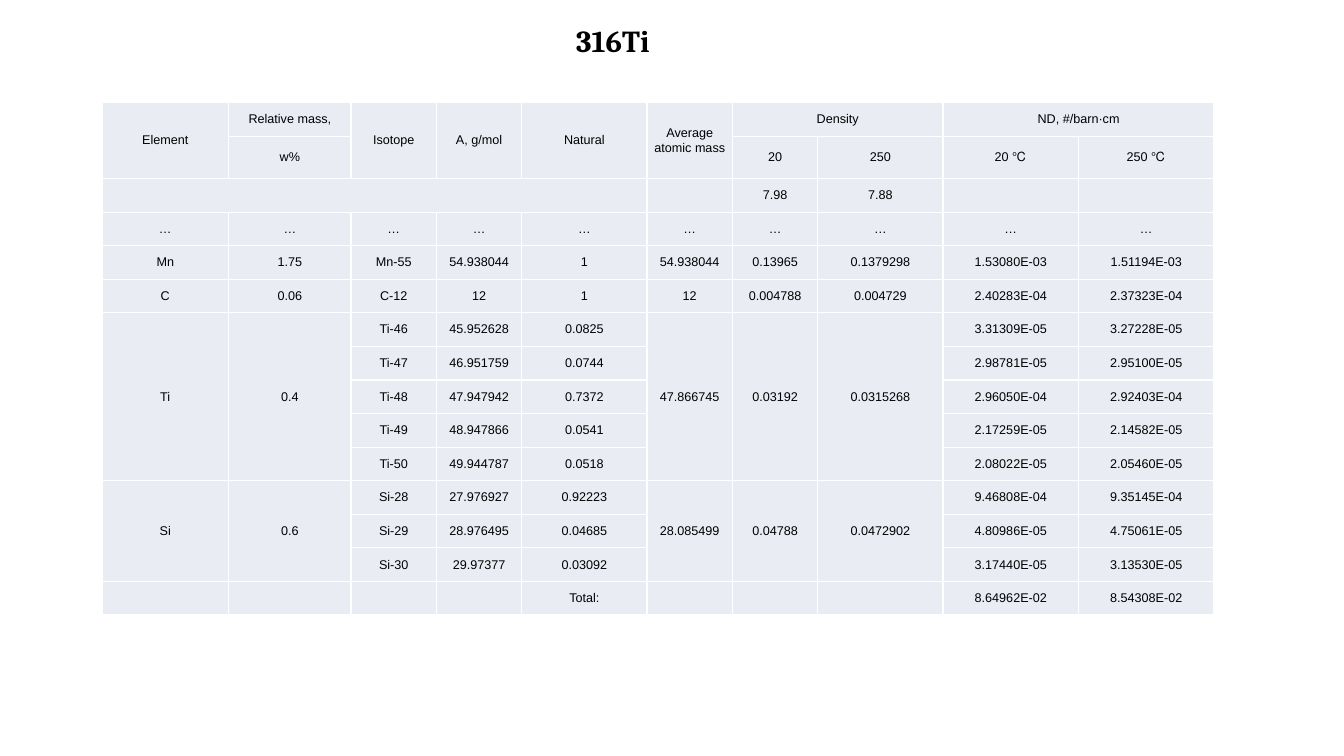
"""Build the 316Ti steel composition slide."""
from pptx import Presentation
from pptx.dml.color import RGBColor
from pptx.enum import text
from pptx.util import Pt

BLACK = RGBColor(0x00, 0x00, 0x00)
PALE = RGBColor(0xE9, 0xEC, 0xF3)

LINES = [
    "Element|Relative mass,|Isotope|A, g/mol|Natural|Average atomic mass|Density||ND, #/barn·cm|",
    "|w%|||||20|250|20 ℃|250 ℃",
    "||||||7.98|7.88||",
    "…|…|…|…|…|…|…|…|…|…",
    "Mn|1.75|Mn-55|54.938044|1|54.938044|0.13965|0.1379298|1.53080E-03|1.51194E-03",
    "C|0.06|C-12|12|1|12|0.004788|0.004729|2.40283E-04|2.37323E-04",
    "Ti|0.4|Ti-46|45.952628|0.0825|47.866745|0.03192|0.0315268|3.31309E-05|3.27228E-05",
    "||Ti-47|46.951759|0.0744||||2.98781E-05|2.95100E-05",
    "||Ti-48|47.947942|0.7372||||2.96050E-04|2.92403E-04",
    "||Ti-49|48.947866|0.0541||||2.17259E-05|2.14582E-05",
    "||Ti-50|49.944787|0.0518||||2.08022E-05|2.05460E-05",
    "Si|0.6|Si-28|27.976927|0.92223|28.085499|0.04788|0.0472902|9.46808E-04|9.35145E-04",
    "||Si-29|28.976495|0.04685||||4.80986E-05|4.75061E-05",
    "||Si-30|29.97377|0.03092||||3.17440E-05|3.13530E-05",
    "||||Total:||||8.64962E-02|8.54308E-02",
]
grid = [line.split("|") for line in LINES]
WIDTHS = [90.5, 87.5, 61, 61, 89.5, 61, 61, 89.5, 96.8, 96.8]

deck = Presentation()
deck.slide_width, deck.slide_height = Pt(960), Pt(540)
slide = deck.slides.add_slide(deck.slide_layouts[5])

title = slide.shapes.title
title.left, title.top, title.width, title.height = Pt(403), Pt(11.5), Pt(480), Pt(35)
frame = title.text_frame
frame.text = "316Ti"
frame.word_wrap = True
frame.auto_size = text.MSO_AUTO_SIZE.SHAPE_TO_FIT_TEXT
frame.vertical_anchor = text.MSO_ANCHOR.TOP
frame.margin_left = frame.margin_right = Pt(8.6)
frame.margin_top = frame.margin_bottom = Pt(4.3)
head = frame.paragraphs[0]
head.alignment = text.PP_ALIGN.LEFT
head.font.name, head.font.size, head.font.bold = "Cambria", Pt(21.8), True
head.font.color.rgb = BLACK

table = slide.shapes.add_table(
    len(grid), len(WIDTHS), Pt(72.8), Pt(73.3), Pt(sum(WIDTHS)), Pt(362.6)).table
table.first_row = table.horz_banding = False
for column, width in zip(table.columns, WIDTHS):
    column.width = Pt(width)
for r, (row, words) in enumerate(zip(table.rows, grid)):
    row.height = Pt(26.6 if r == 1 else 24)
    for cell, word in zip(row.cells, words):
        cell.text = word
        cell.fill.solid()
        cell.fill.fore_color.rgb = PALE
        cell.vertical_anchor = text.MSO_ANCHOR.MIDDLE
        cell.margin_left = cell.margin_right = 0
        cell.margin_top = cell.margin_bottom = Pt(4.3 if word else 0)
        para = cell.text_frame.paragraphs[0]
        para.alignment = text.PP_ALIGN.CENTER
        para.font.name, para.font.size = "Arial", Pt(9)
        para.font.color.rgb = BLACK

spans = [(0, c, 1, c) for c in (0, 2, 3, 4, 5)]
spans += [(0, 6, 0, 7), (0, 8, 0, 9), (2, 0, 2, 4)]
for top, end in ((6, 10), (11, 13)):
    spans += [(top, c, end, c) for c in (0, 1, 5, 6, 7)]
for top, left, end, right in spans:
    table.cell(top, left).merge(table.cell(end, right))

deck.save("out.pptx")
